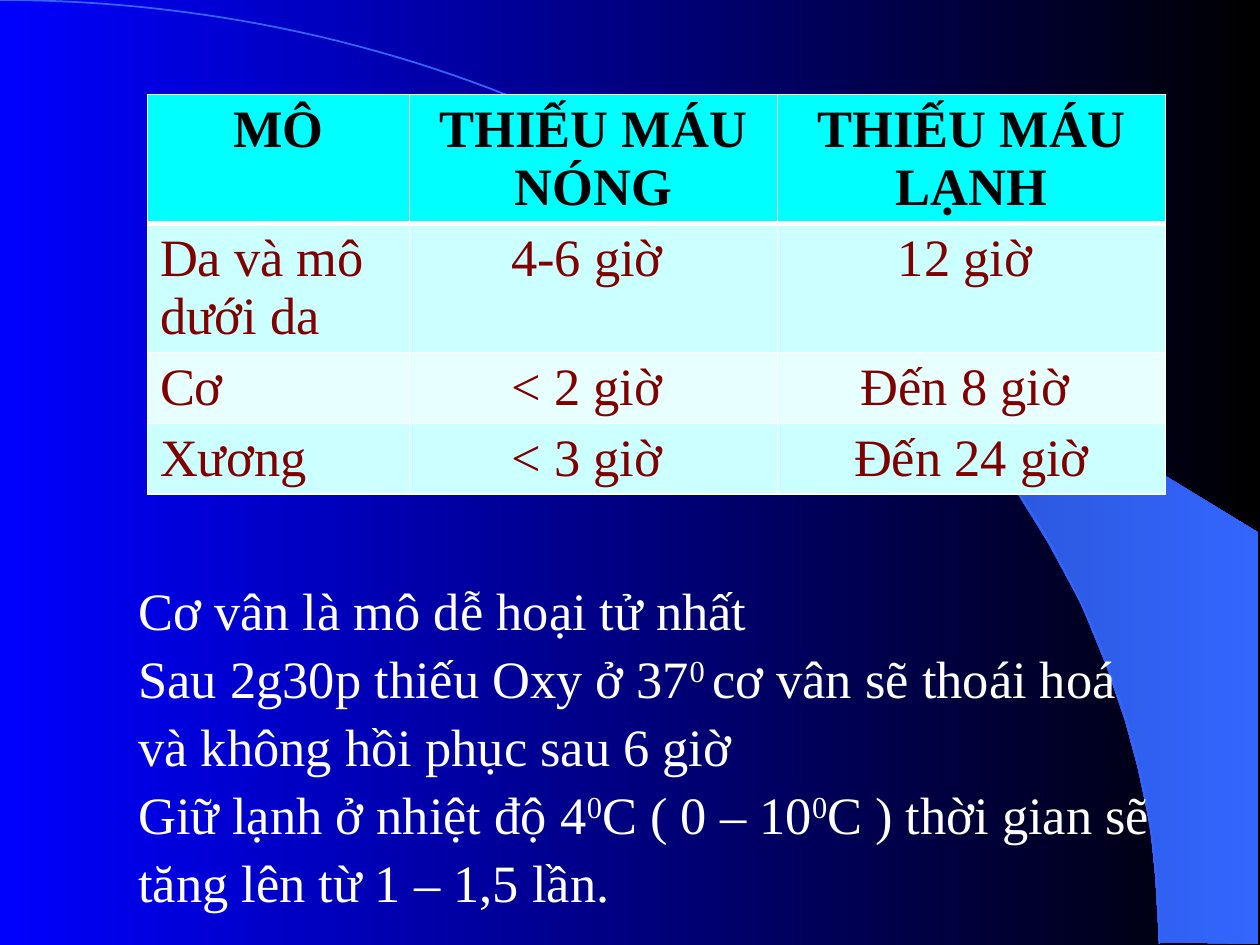
from math import cos, pi, sin

from lxml.etree import SubElement
from pptx import Presentation
from pptx.dml.color import RGBColor as RGB
from pptx.enum.text import MSO_AUTO_SIZE as Auto, PP_ALIGN as Align
from pptx.oxml.ns import qn
from pptx.util import Inches, Pt

FONT = "Times New Roman"
COLORS = {
    "blue": "0000FF", "black": "000000", "white": "FFFFFF",
    "dusk": "2449B6", "sky": "3366FF", "maroon": "800000",
    "head": "00FFFF", "band": "CCFFFF", "pale": "E7FFFF",
}
WEDGE = [
    (3.31, 5.75), (4.1, 5.76), (4.1, 2.5), (0, 0), (0.35, 0.26),
    (0.64, 0.49), (0.96, 0.77), (1.27, 1.07), (1.73, 1.57), (2.14, 2.11),
    (2.43, 2.58), (2.69, 3.06), (2.89, 3.55), (3.04, 3.99), (3.14, 4.36),
    (3.24, 4.83), (3.28, 5.23),
]
ROWS = [
    ("MÔ", "THIẾU MÁU NÓNG", "THIẾU MÁU LẠNH"),
    ("Da và mô dưới da", "4-6 giờ ", "12 giờ "),
    ("Cơ", "< 2 giờ ", "Đến 8 giờ "),
    ("Xương", "< 3 giờ ", "Đến 24 giờ"),
]
NOTES = [
    [("Cơ vân là mô dễ hoại tử nhất", False)],
    [("Sau 2g30p thiếu Oxy ở 37", False), ("0 ", True),
     ("cơ vân sẽ thoái hoá và không hồi phục sau 6 giờ", False)],
    [("Giữ lạnh ở nhiệt độ 4", False), ("0", True), ("C ( 0 – 10", False),
     ("0", True), ("C ) thời gian sẽ tăng lên từ 1 – 1,5 lần.", False)],
]


def color(name):
    return RGB.from_string(COLORS[name])


def shade(fill, *names):
    fill.gradient()
    fill.gradient_angle = 0
    for stop, name in zip(fill.gradient_stops, names):
        stop.color.rgb = color(name)


def style(para, name, bold=False):
    font = para.font
    font.name, font.size, font.bold = FONT, Pt(30), bold
    font.color.rgb = color(name)


def outline(slide, left, top, points, close):
    spots = [(Inches(left + x), Inches(top + y)) for x, y in points]
    form = slide.shapes.build_freeform(*spots[0])
    form.add_line_segments(spots[1:], close=close)
    shape = form.convert_to_shape()
    shape.shadow.inherit = False
    return shape


def add_wedge(slide, left, top):
    shape = outline(slide, left, top, WEDGE, True)
    shade(shape.fill, "dusk", "sky")
    shape.line.fill.background()


def add_arc(slide, left, top, width, height, steps=90):
    turns = [pi / 2 * i / steps for i in range(steps + 1)]
    points = [(width * sin(t), height * (1 - cos(t))) for t in turns]
    shape = outline(slide, left, top, points, False)
    shape.fill.background()
    shape.line.color.rgb = color("sky")
    shape.line.width = Pt(1)


def add_border(cell, side, width):
    edge = SubElement(cell._tc.get_or_add_tcPr(), qn(f"a:{side}"), w=str(Pt(width)))
    fill = SubElement(edge, qn("a:solidFill"))
    SubElement(fill, qn("a:srgbClr"), val=COLORS["white"])


def add_grid(slide, left, top, widths, heights):
    box = (left, top, sum(widths), sum(heights))
    table = slide.shapes.add_table(
        len(ROWS), len(widths), *map(Inches, box)).table
    for col, width in zip(table.columns, widths):
        col.width = Inches(width)
    for r, (row, height) in enumerate(zip(ROWS, heights)):
        table.rows[r].height = Inches(height)
        for c, text in enumerate(row):
            cell = table.cell(r, c)
            cell.text = text
            para = cell.text_frame.paragraphs[0]
            style(para, "maroon" if r else "black", r == 0)
            para.alignment = Align.LEFT if r and not c else Align.CENTER
            for side in ("lnL", "lnR", "lnT", "lnB"):
                thick = (r, side) in ((0, "lnB"), (1, "lnT"))
                add_border(cell, side, 3 if thick else 1)
            cell.fill.solid()
            cell.fill.fore_color.rgb = color(("head", "band", "pale", "band")[r])


def add_notes(slide, left, top, width, height):
    box = slide.shapes.add_textbox(*map(Inches, (left, top, width, height)))
    frame = box.text_frame
    frame.word_wrap = True
    frame.auto_size = Auto.SHAPE_TO_FIT_TEXT
    for i, parts in enumerate(NOTES):
        para = frame.add_paragraph() if i else frame.paragraphs[0]
        style(para, "white")
        para.line_spacing = 1.08
        for text, raised in parts:
            run = para.add_run()
            run.text = text
            if raised:
                run.font._element.set("baseline", "30000")


def main():
    deck = Presentation()
    deck.slide_width, deck.slide_height = Inches(10), Inches(7.5)
    slide = deck.slides.add_slide(deck.slide_layouts[6])
    shade(slide.background.fill, "blue", "black")
    add_wedge(slide, 5.89, 1.73)
    add_arc(slide, 0, 0, 9.2, 7.49)
    add_grid(slide, 1.17, 0.75, (2.08, 2.92, 3.08), (1.02, 1.02, 0.56, 0.56))
    add_notes(slide, 1, 4.5, 8.33, 2.63)
    deck.save("out.pptx")


if __name__ == "__main__":
    main()
